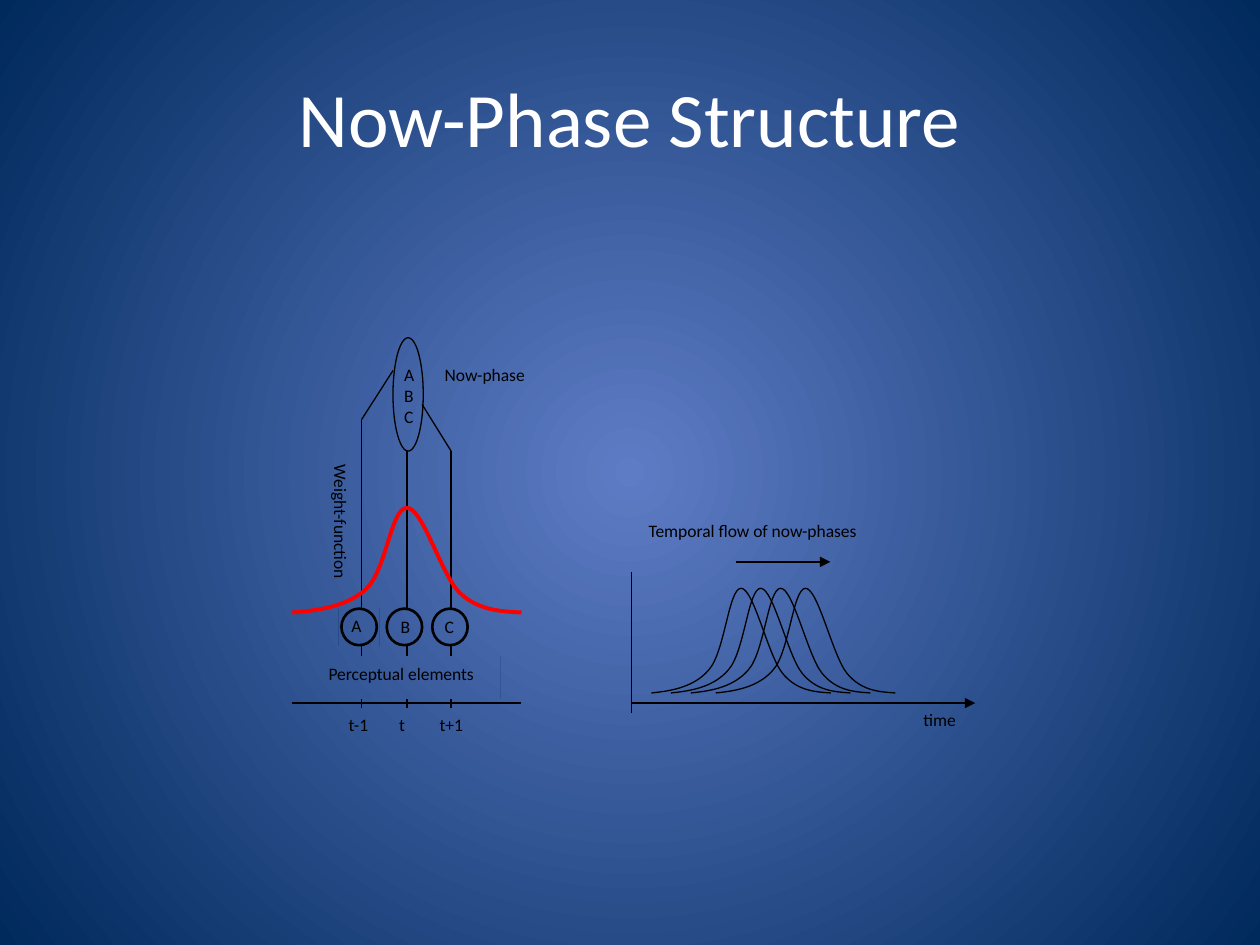
from lxml import etree
from pptx import Presentation
from pptx.dml.color import RGBColor
from pptx.enum.shapes import MSO_CONNECTOR, MSO_SHAPE as SHAPE
from pptx.enum.text import MSO_ANCHOR, PP_ALIGN
from pptx.oxml import parse_xml
from pptx.oxml.ns import nsdecls, qn
from pptx.util import Pt

WHITE = RGBColor(0xFF, 0xFF, 0xFF)
BLACK = RGBColor(0, 0, 0)
RED = RGBColor(0xFF, 0, 0)
GLOW = RGBColor(0x5E, 0x7C, 0xC5)
NAVY = RGBColor(0x00, 0x29, 0x5C)
FONT = "Calibri"

# Bezier points of the bell curve, as shares of its width and height
BELL = [(0, 1), (0.12, 0.98), (0.24, 0.94), (0.32, 0.78),
        (0.41, 0.61), (0.43, 0), (0.5, 0),
        (0.57, 0), (0.65, 0.64), (0.73, 0.81),
        (0.81, 0.98), (0.91, 0.99), (1, 1)]
BELL_HEIGHT = 59.8

prs = Presentation()
prs.slide_width, prs.slide_height = Pt(720), Pt(540)
slide = prs.slides.add_slide(prs.slide_layouts[5])
shapes = slide.shapes

# Background: radial gradient from the centre
backdrop = slide.background.fill
backdrop.gradient()
for stop, color in zip(backdrop.gradient_stops, (GLOW, NAVY)):
    stop.color.rgb = color
linear = next(slide.background._cSld.iter(qn("a:lin")))
linear.getparent().replace(linear, parse_xml(
    f'<a:path {nsdecls("a")} path="circle">'
    '<a:fillToRect l="50000" t="50000" r="50000" b="50000"/></a:path>'))

title = shapes.title
title.left, title.top, title.width, title.height = Pt(36), Pt(21.6), Pt(648), Pt(90)
title.text_frame.text = "Now-Phase Structure"
title.text_frame.vertical_anchor = MSO_ANCHOR.MIDDLE
heading = title.text_frame.paragraphs[0]
heading.alignment = PP_ALIGN.CENTER
heading.runs[0].font.name = FONT
heading.runs[0].font.size = Pt(44)
heading.runs[0].font.color.rgb = WHITE

# Straight lines: x1, y1, x2, y2, arrow at the end
for x1, y1, x2, y2, arrow in [
    (232.5, 257.8, 232.5, 404.6, False),  # t
    (206.6, 239.8, 206.6, 404.6, False),  # t-1
    (257.8, 257.8, 257.8, 404.6, False),  # t+1
    (167, 401.8, 298, 401.8, False),      # axis of the elements
    (257.8, 257.8, 241.2, 231.1, False),  # C into the now-phase
    (206.6, 239.8, 224.6, 211.7, False),  # A into the now-phase
    (360.7, 401.8, 557.3, 401.8, True),   # time axis
    (360.7, 407.5, 360.7, 326.9, False),  # upright axis
    (420.5, 321.1, 474.5, 321.1, True),   # flow direction
]:
    stroke = shapes.add_connector(MSO_CONNECTOR.STRAIGHT, Pt(x1), Pt(y1), Pt(x2), Pt(y2))
    stroke.line.color.rgb = BLACK
    stroke.line.width = Pt(0.75)
    if arrow:
        etree.SubElement(stroke.line._get_or_add_ln(), qn("a:tailEnd"), type="triangle")
    etree.SubElement(stroke._element.spPr, qn("a:effectLst"))

# Rings and masks: preset, left, top, width, height, line width, hides what is behind
for preset, x, y, w, h, weight, hides in [
    (SHAPE.RECTANGLE, 193.7, 347.8, 23, 20.9, 0, True),
    (SHAPE.RECTANGLE, 180.7, 375.1, 105.1, 23.8, 0, True),
    (SHAPE.OVAL, 195.1, 347.8, 20.2, 20.9, 1.5, False),
    (SHAPE.OVAL, 221, 347.8, 20.2, 20.9, 1.5, True),
    (SHAPE.OVAL, 247, 347.8, 20.2, 20.9, 1.5, True),
    (SHAPE.OVAL, 224.6, 193, 17.3, 64.8, 0.75, False),
]:
    node = shapes.add_shape(preset, Pt(x), Pt(y), Pt(w), Pt(h))
    node.shadow.inherit = False
    if hides:
        # Filled with the slide background
        node._element.remove(node._element.find(qn("p:style")))
        node._element.set("useBgFill", "1")
    else:
        node.fill.background()
    if weight:
        node.line.color.rgb = BLACK
        node.line.width = Pt(weight)
    else:
        node.line.fill.background()

# Labels: text, left, top, width, height
for text, x, y, w, h in [
    ("Now-phase", 247, 204.5, 62, 27.4),
    ("ABC", 223.9, 204.5, 17.3, 52.6),
    ("Weight-function", 172.8, 258.5, 31.7, 90),
    ("A", 193.7, 347.8, 23, 20.9),
    ("B", 221.8, 348.5, 23, 20.9),
    ("C", 247, 348.5, 23, 23.8),
    ("Perceptual elements", 180.7, 375.1, 105.1, 23.8),
    ("t-1", 192.2, 404.6, 28.8, 20.9),
    ("t", 221, 404.6, 23, 23.8),
    ("t+1", 244.1, 404.6, 31.7, 23.8),
    ("Temporal flow of now-phases", 363.6, 293.8, 149, 20.9),
    ("time", 520.6, 401.8, 39.6, 23.8),
]:
    frame = shapes.add_textbox(Pt(x), Pt(y), Pt(w), Pt(h)).text_frame
    frame.word_wrap = True
    frame.text = text
    if text == "Weight-function":
        frame._txBody.bodyPr.set("vert", "vert")
    paragraph = frame.paragraphs[0]
    paragraph.space_after = Pt(10)
    font = paragraph.runs[0].font
    font.name, font.size, font.color.rgb = FONT, Pt(10), BLACK

# Bell curves: left, top, width, colour, line width
for x, y, width, color, weight in [
    (372.2, 336.2, 102.6, BLACK, 0.75),
    (383.4, 336.2, 102.6, BLACK, 0.75),
    (394.8, 336.2, 102.6, BLACK, 0.75),
    (409, 336.2, 102.6, BLACK, 0.75),
    (167, 290.2, 131, RED, 2.25),
]:
    points = [(Pt(x + u * width), Pt(y + v * BELL_HEIGHT)) for u, v in BELL]
    builder = shapes.build_freeform(*points[0])
    builder.add_line_segments(points[1:], close=False)
    bell = builder.convert_to_shape()
    # Every three line segments become one Bezier segment
    segments = list(bell._element.iter(qn("a:lnTo")))
    for first, second, third in zip(*[iter(segments)] * 3):
        cubic = etree.Element(qn("a:cubicBezTo"))
        first.addprevious(cubic)
        for segment in (first, second, third):
            cubic.append(segment[0])
            segment.getparent().remove(segment)
    bell.shadow.inherit = False
    bell.fill.background()
    bell.line.color.rgb = color
    bell.line.width = Pt(weight)

prs.save("out.pptx")
